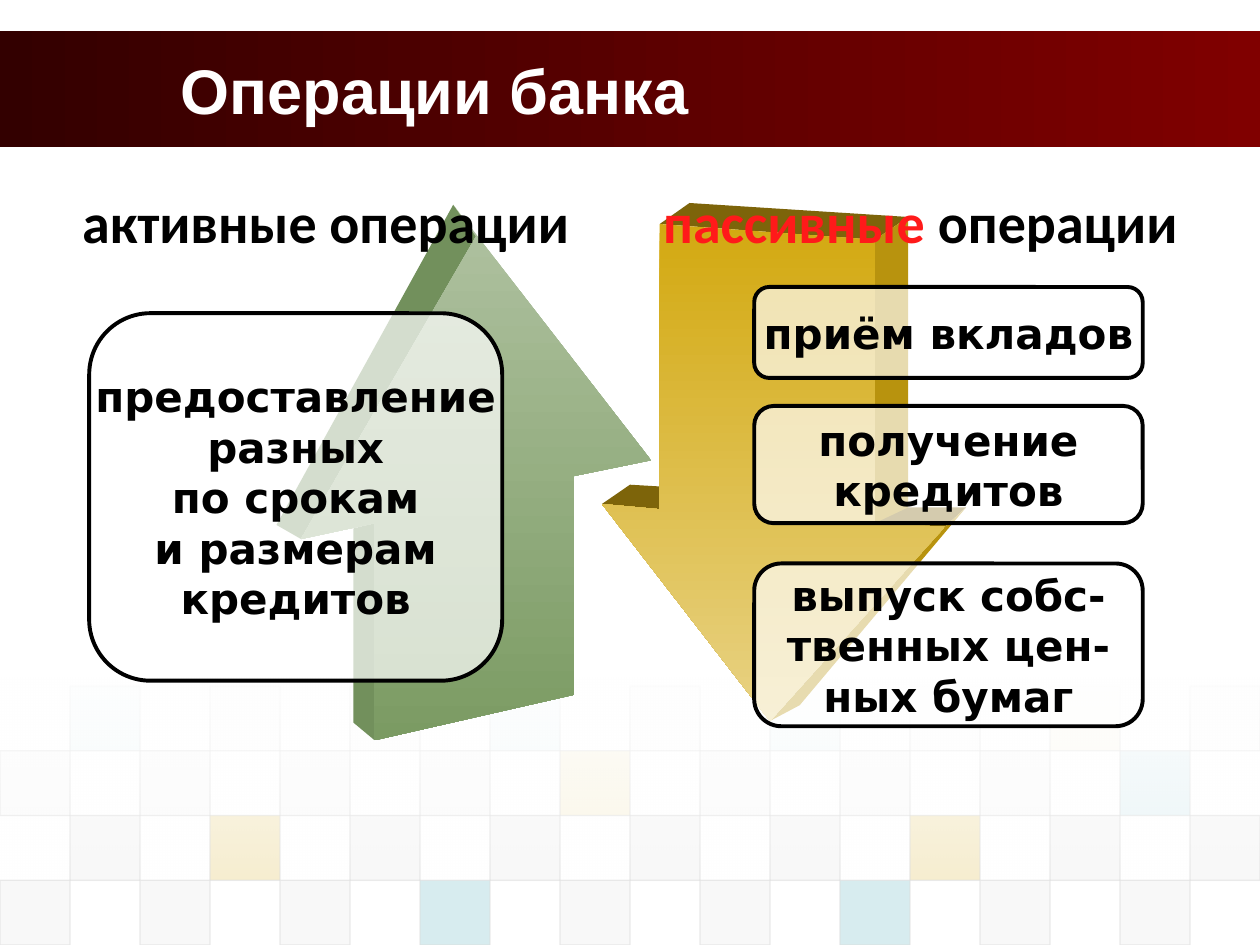
from dataclasses import dataclass

from lxml import etree
from pptx import Presentation
from pptx.dml.color import RGBColor
from pptx.enum.shapes import MSO_SHAPE
from pptx.enum.text import MSO_ANCHOR, PP_ALIGN
from pptx.oxml.ns import qn
from pptx.util import Pt

RECT, ROUNDED = MSO_SHAPE.RECTANGLE, MSO_SHAPE.ROUNDED_RECTANGLE
MIDDLE = MSO_ANCHOR.MIDDLE
LEFT, CENTER = PP_ALIGN.LEFT, PP_ALIGN.CENTER
RIGHTWARD, DOWNWARD = 0, 270

COLORS = {
    "white": "FFFFFF", "black": "000000", "red": "FF1A1A",
    "band_dark": "330000", "band_light": "800000",
    "gray": "DDDDDD", "pale": "EAEAEA", "gold": "D3A911", "teal": "38A3B2",
    "green_top": "B0C2A1", "green_bottom": "7B9B63", "green_side": "72905C",
    "gold_bottom": "E8D283", "gold_side": "B8930E", "gold_shade": "7D640A",
}

# Checkerboard measures
TILE_W, TILE_H, TILES_TOP, TILE_COLUMNS = 40, 37, 392, 18


@dataclass
class TileRow:
    first_column: int
    base: str
    opacity: int
    accents: dict[int, str]


@dataclass
class Face:
    """One side of a solid arrow; two colours make a vertical gradient."""
    colors: tuple[str, ...]
    points: list[tuple[float, float]]


@dataclass
class OperationBox:
    left: float
    top: float
    width: float
    height: float
    opacity: int
    lines: list[str]


TILE_ROWS = [
    TileRow(1, "pale", 5, {1: "teal", 7: "teal", 11: "teal", 15: "gold"}),
    TileRow(0, "gray", 10, {8: "gold", 16: "teal"}),
    TileRow(1, "gray", 20, {3: "gold", 13: "gold"}),
    TileRow(0, "gray", 20, {6: "teal", 12: "teal"}),
]

ARROW_FACES = [
    # Upward arrow: head side, shaft side, front
    Face(("green_side",), [(259, 117), (272, 135), (171.5, 308.5), (158, 300)]),
    Face(("green_side",), [(201.5, 302), (214.5, 299), (214.5, 423), (201.5, 413)]),
    Face(("green_top", "green_bottom"),
         [(259, 117), (372, 263), (328, 272.5), (328, 397), (214.5, 423),
          (214.5, 299), (171.5, 308.5), (272, 135)]),
    # Downward arrow: top, shaft side, both shoulders, head side, front
    Face(("gold_shade",), [(377, 127.5), (394, 115.5), (519, 124), (500.5, 137)]),
    Face(("gold_side",), [(500.5, 137), (519, 124), (519, 300), (500.5, 299)]),
    Face(("gold_shade",), [(344, 288.5), (360, 277), (377, 278), (377, 291)]),
    Face(("gold_shade",), [(500.5, 299), (519, 290), (551.5, 290), (540, 301)]),
    Face(("gold_side",), [(540, 301), (551.5, 290), (457, 403), (440, 412.5)]),
    Face(("gold", "gold_bottom"),
         [(377, 127.5), (500.5, 137), (500.5, 299), (540, 301), (440, 412.5),
          (344, 288.5), (377, 291)]),
]

OPERATION_BOXES = [
    OperationBox(431, 164, 222, 52, 67, ["приём вкладов"]),
    OperationBox(431, 232, 222, 67, 67, ["получение", "кредитов"]),
    OperationBox(431, 322, 222, 93, 67, ["выпуск собс-", "твенных цен-", "ных бумаг"]),
    OperationBox(51, 179, 236, 210, 70,
                 ["предоставление", "разных", "по срокам", "и размерам", "кредитов"]),
]


def rgb(name: str) -> RGBColor:
    return RGBColor.from_string(COLORS[name])


def set_opacities(shape, *percents: int) -> None:
    """Apply opacities to the shape's fill and line colours, in that order."""
    colors = list(shape._element.spPr.iter(qn("a:srgbClr")))
    for color, percent in zip(colors, percents):
        etree.SubElement(color, qn("a:alpha"), val=str(percent * 1000))


def fill_gradient(shape, start: str, end: str, angle: int) -> None:
    shape.fill.gradient()
    shape.fill.gradient_angle = angle
    for stop, name, position in zip(shape.fill.gradient_stops, (start, end), (0, 1)):
        stop.color.rgb = rgb(name)
        stop.position = position


def fill_solid(shape, name: str) -> None:
    shape.fill.solid()
    shape.fill.fore_color.rgb = rgb(name)


def add_block(shapes, preset, left: float, top: float, width: float, height: float):
    block = shapes.add_shape(preset, Pt(left), Pt(top), Pt(width), Pt(height))
    block.shadow.inherit = False
    block.line.fill.background()
    return block


def outline(shape, name: str, width: float) -> None:
    shape.line.color.rgb = rgb(name)
    shape.line.width = Pt(width)


def format_runs(paragraph, font: str, size: float, color: str) -> None:
    for run in paragraph.runs:
        run.font.name, run.font.size, run.font.bold = font, Pt(size), True
        run.font.color.rgb = rgb(color)


def add_tile_row(shapes, index: int, row: TileRow) -> None:
    for column in range(row.first_column, TILE_COLUMNS, 2):
        tile = add_block(shapes, RECT, column * TILE_W, TILES_TOP + index * TILE_H,
                         TILE_W, TILE_H)
        fill_solid(tile, row.accents.get(column, row.base))
        outline(tile, "gray", 0.75)
        set_opacities(tile, row.opacity, 60)


def add_face(shapes, face: Face) -> None:
    builder = shapes.build_freeform(*face.points[0], scale=Pt(1))
    builder.add_line_segments(face.points[1:], close=True)
    side = builder.convert_to_shape()
    side.shadow.inherit = False
    side.line.fill.background()
    if len(face.colors) == 2:
        fill_gradient(side, *face.colors, DOWNWARD)
    else:
        fill_solid(side, face.colors[0])


def add_operation_box(shapes, box: OperationBox) -> None:
    card = add_block(shapes, ROUNDED, box.left, box.top, box.width, box.height)
    fill_solid(card, "white")
    outline(card, "black", 2.25)
    set_opacities(card, box.opacity)
    frame = card.text_frame
    frame.text = "\n".join(box.lines)
    frame.word_wrap = False
    frame.vertical_anchor = MIDDLE
    for paragraph in frame.paragraphs:
        paragraph.alignment = CENTER
        format_runs(paragraph, "DejaVu Sans", 24, "black")


def add_headings(shapes) -> None:
    frame = shapes.add_textbox(Pt(31), Pt(101), Pt(657), Pt(51)).text_frame
    frame.word_wrap = True
    frame.vertical_anchor = MIDDLE
    frame.margin_left = Pt(16)
    headings = frame.paragraphs[0]
    tabs = etree.SubElement(headings._p.get_or_add_pPr(), qn("a:tabLst"))
    etree.SubElement(tabs, qn("a:tab"), pos=str(Pt(332)), algn="l")
    for wording in ("активные операции\t", "пассивные", " операции"):
        headings.add_run().text = wording
    format_runs(headings, "Calibri", 32, "black")
    headings.runs[1].font.color.rgb = rgb("red")


def main() -> None:
    prs = Presentation()
    prs.slide_width, prs.slide_height = Pt(720), Pt(540)
    slide = prs.slides.add_slide(prs.slide_layouts[5])
    shapes = slide.shapes

    # Backdrop: title band and fading checkerboard
    band = add_block(shapes, RECT, 0, 18, 720, 66)
    fill_gradient(band, "band_dark", "band_light", RIGHTWARD)
    for index, row in enumerate(TILE_ROWS):
        add_tile_row(shapes, index, row)
    fade = add_block(shapes, RECT, 0, 387, 720, 117)
    fill_gradient(fade, "white", "white", DOWNWARD)
    set_opacities(fade, 90, 0)

    # Arrows, operations and headings
    for face in ARROW_FACES:
        add_face(shapes, face)
    for box in OPERATION_BOXES:
        add_operation_box(shapes, box)
    add_headings(shapes)

    # Title, brought in front of the band
    title = shapes.title
    title.left, title.top, title.width, title.height = Pt(96), Pt(18), Pt(582), Pt(66)
    title.text_frame.text = "Операции банка"
    title.text_frame.vertical_anchor = MIDDLE
    title.text_frame.paragraphs[0].alignment = LEFT
    format_runs(title.text_frame.paragraphs[0], "Arial", 36, "white")
    shapes._spTree.append(title._element)

    prs.save("out.pptx")


if __name__ == "__main__":
    main()
